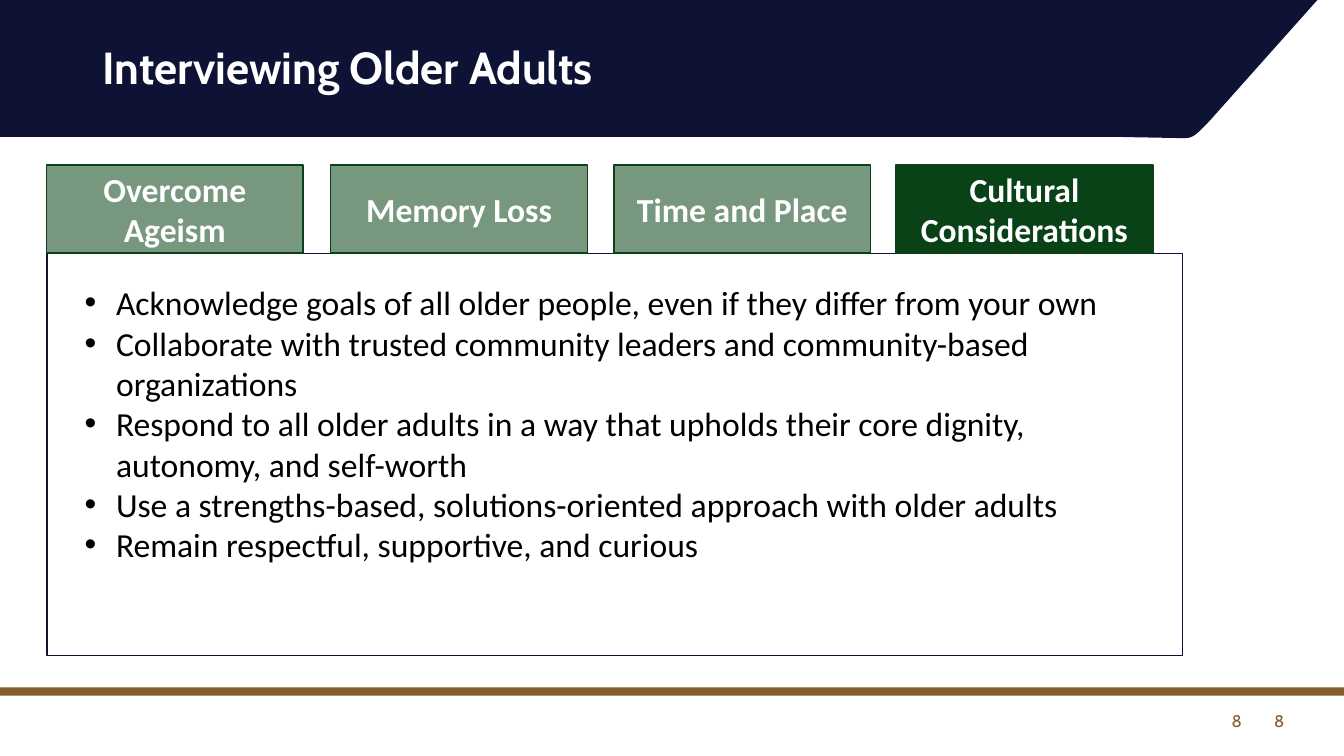
from lxml import etree
from pptx import Presentation
from pptx.dml.color import RGBColor
from pptx.enum import shapes, text
from pptx.oxml.ns import qn
from pptx.util import Pt

TITLE = "Interviewing Older Adults"
TABS = [  # label, left, opacity in percent
    ("Overcome Ageism", 33.1, 55),
    ("Memory Loss", 236.2, 55),
    ("Time and Place", 438.5, 55),
    ("Cultural Considerations", 640, 100),
]
POINTS = [
    "Acknowledge goals of all older people, even if they differ from your own",
    "Collaborate with trusted community leaders and community-based organizations",
    "Respond to all older adults in a way that upholds their core dignity, "
    "autonomy, and self-worth",
    "Use a strengths-based, solutions-oriented approach with older adults",
    "Remain respectful, supportive, and curious",
]
PAGE = "8"
PAGE_LEFTS = [708.5, 678.2]
BEND = [(841, 98.6), (851, 99), (851.8, 99.4), (864, 86.4)]  # cubic curve

THEME = {
    "navy": "0E1336", "edge": "0F1336", "green": "094216", "brown": "835C2F",
    "white": "FFFFFF", "black": "000000",
    "head": "Cabin", "body": "Calibri",
    "title": 32, "text": 24, "small": 12,
}
WIDE, HIGH = 960, 540
INDENT = 22.5


def tint(name):
    return RGBColor.from_string(THEME[name])


def paint(shape, fill, line=None, alpha=100):
    shape.shadow.inherit = False
    shape.fill.solid()
    shape.fill.fore_color.rgb = tint(fill)
    if alpha < 100:
        clr = shape.fill._xPr.find(qn("a:solidFill"))[0]
        etree.SubElement(clr, qn("a:alpha"), val=str(alpha * 1000))
    if line:
        shape.line.color.rgb = tint(line)
        shape.line.width = Pt(1)
    else:
        shape.line.fill.background()


def block(slide, spot, fill, line=None, alpha=100):
    shape = slide.shapes.add_shape(
        shapes.MSO_SHAPE.RECTANGLE, *map(Pt, spot))
    paint(shape, fill, line, alpha)
    return shape


def dot(para):
    """Give a paragraph a round bullet with a hanging indent."""
    props = para._p.get_or_add_pPr()
    props.set("marL", str(Pt(INDENT)))
    props.set("indent", str(-Pt(INDENT)))
    etree.SubElement(props, qn("a:buFont"), typeface="Arial")
    etree.SubElement(props, qn("a:buChar"), char="•")


def write(shape, lines, face, size, color, bold=False, align="LEFT",
          anchor="TOP", bullet=False, space=1.0):
    frame = shape.text_frame
    frame.word_wrap = True
    frame.vertical_anchor = getattr(text.MSO_ANCHOR, anchor)
    for i, line in enumerate(lines):
        para = frame.add_paragraph() if i else frame.paragraphs[0]
        para.alignment = getattr(text.PP_ALIGN, align)
        para.line_spacing = space
        if bullet:
            dot(para)
        run = para.add_run()
        run.text = line
        look = {"name": THEME[face], "size": Pt(THEME[size]), "bold": bold}
        for key, value in look.items():
            setattr(run.font, key, value)
        run.font.color.rgb = tint(color)


def label(slide, spot, *args, **look):
    write(slide.shapes.add_textbox(*map(Pt, spot)), *args, **look)


def curve(ends, steps=12):
    """Points along a cubic curve, after its start."""
    for i in range(1, steps + 1):
        t = i / steps
        parts = ((1 - t) ** 3, 3 * t * (1 - t) ** 2, 3 * t * t * (1 - t), t ** 3)
        yield tuple(sum(w * p[k] for w, p in zip(parts, ends)) for k in (0, 1))


def banner(slide):
    route = [(802, 97.9), BEND[0], *curve(BEND), (941, 0)]
    pen = slide.shapes.build_freeform(Pt(802), 0)
    pen.add_line_segments([(Pt(x), Pt(y)) for x, y in route], close=True)
    paint(pen.convert_to_shape(), "navy")
    block(slide, (0, 0, 804.2, 97.9), "navy")


def main():
    deck = Presentation()
    deck.slide_width, deck.slide_height = Pt(WIDE), Pt(HIGH)
    slide = deck.slides.add_slide(deck.slide_layouts[6])

    banner(slide)
    block(slide, (0, 491, WIDE, 6), "brown")
    label(slide, (66.2, 29, 828, 104), [TITLE], "head", "title", "white",
          bold=True, space=0.9)
    for left in PAGE_LEFTS:
        label(slide, (left, 500.5, 216, 28.8), [PAGE], "head", "small",
              "brown", align="RIGHT", anchor="MIDDLE")

    block(slide, (33.6, 180.9, 811, 287.3), "white", "edge")
    label(slide, (53.3, 198, 778.3, 333.4), POINTS, "body", "text", "black",
          bullet=True)
    for name, left, alpha in TABS:
        tab = block(slide, (left, 118, 183.5, 62.7), "green", "green", alpha)
        write(tab, [name], "body", "text", "white", bold=True,
              align="CENTER", anchor="MIDDLE")
    deck.save("out.pptx")


if __name__ == "__main__":
    main()
